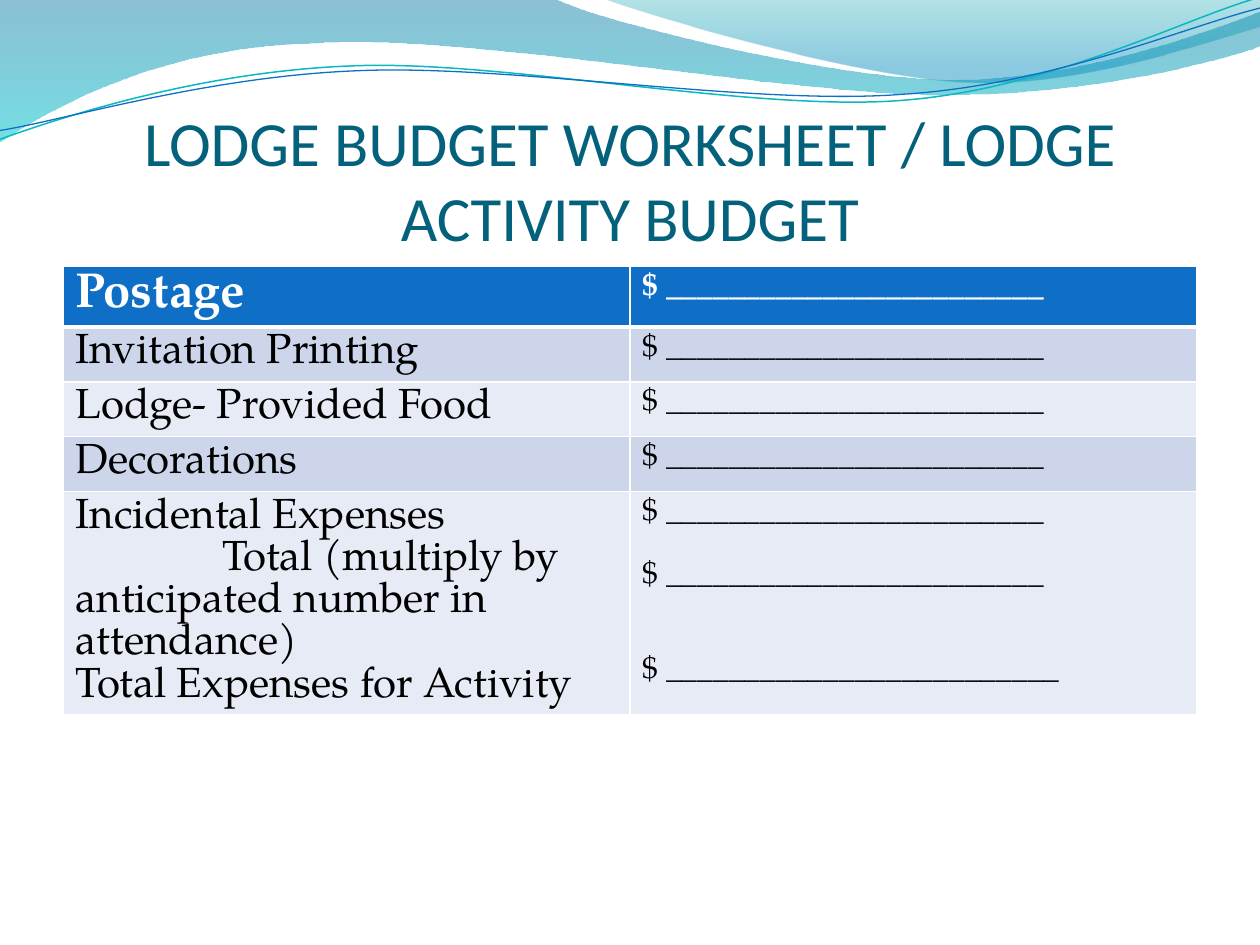
from lxml import etree
from pptx import Presentation
from pptx.dml.color import RGBColor
from pptx.enum.text import MSO_ANCHOR, MSO_AUTO_SIZE, PP_ALIGN
from pptx.oxml.ns import qn
from pptx.util import Cm, Pt

CENTER = PP_ALIGN.CENTER
BOTTOM = MSO_ANCHOR.BOTTOM
NO_AUTOFIT = MSO_AUTO_SIZE.NONE

WHITE = RGBColor(0xFF, 0xFF, 0xFF)
BLACK = RGBColor(0x00, 0x00, 0x00)
TITLE_TEAL = RGBColor(0x04, 0x61, 0x7B)
BLUE = RGBColor(0x0F, 0x6F, 0xC6)
TEAL = RGBColor(0x0A, 0xB8, 0xBF)
BAND_DARK = RGBColor(0xCC, 0xD5, 0xEA)
BAND_LIGHT = RGBColor(0xE7, 0xEB, 0xF5)
WAVE_BLUE = RGBColor(0x00, 0x74, 0xA1)
WAVE_AQUA = RGBColor(0x00, 0xC6, 0xCF)
CREST_GREEN = RGBColor(0x00, 0xA1, 0xA9)
CREST_BLUE = RGBColor(0x00, 0x8B, 0xBF)

TITLE_FONT = "Calibri"
BODY_FONT = "TeX Gyre Pagella"
GRID = 2.54
RIPPLE_ROTATION = 357.3

WAVES = [
    {
        "outline": [(0, 0), (4.4, -0.01),
                    (4.76, 0.17, 6.64, 0.63, 7.58, 0.63), (8.53, 0.63, 9.58, 0.26, 10, 0.09),
                    (10.01, 0.36), (9.83, 0.44, 8.7, 0.76, 7.46, 0.75),
                    (6.22, 0.75, 3.82, 0.28, 2.57, 0.34),
                    (1.29, 0.36, 0.46, 0.83, -0.01, 1.13), (0, 0)],
        "stops": [(0, WAVE_BLUE, 45), (1, WAVE_AQUA, 55)],
    },
    {
        "outline": [(4.79, -0.01), (5.09, 0.11, 6.82, 0.62, 7.69, 0.65),
                    (8.56, 0.69, 9.61, 0.32, 10, 0.21), (10, 0), (4.79, -0.01)],
        "stops": [(0, CREST_GREEN, 30), (0.8, CREST_BLUE, 45)],
    },
]
RIPPLES = [
    {
        "outline": [(-0.02, 0.87), (0.47, 0.72, 1.58, 0.41, 2.78, 0.42),
                    (3.96, 0.42, 5.91, 0.93, 7.12, 0.9), (8.32, 0.87, 9.4, 0.36, 10, 0.22)],
        "color": TEAL, "width": 0.85,
    },
    {
        "outline": [(-0.02, 0.8), (0.46, 0.75, 1.64, 0.45, 2.83, 0.46),
                    (4.03, 0.46, 5.96, 0.89, 7.16, 0.85), (8.35, 0.83, 9.42, 0.42, 10.02, 0.3)],
        "color": BLUE, "width": 0.75,
    },
]

BLANK = "$ " + "_" * 24
ITEMS = [
    (["Postage"], [BLANK]),
    (["Invitation Printing"], [BLANK]),
    (["Lodge- Provided Food"], [BLANK]),
    (["Decorations"], [BLANK]),
    (["Incidental Expenses",
      "Total (multiply by anticipated number in attendance)",
      "Total Expenses for Activity"],
     [BLANK, BLANK, BLANK + "_"]),
]
AMOUNT_GAPS = [0, 18, 36]


def add_curve(slide, outline, close):
    """Add a freeform of lines and cubic curves to the layout behind the slide."""
    steps = [[(Cm(x * GRID), Cm(y * GRID)) for x, y in zip(step[::2], step[1::2])]
             for step in outline]
    ends = [step[-1] for step in steps]
    builder = slide.shapes.build_freeform(*ends[0])
    builder.add_line_segments(ends[1:], close=close)
    shape = builder.convert_to_shape()
    shape.shadow.inherit = False
    left, top = shape.left, shape.top
    segments = list(shape._element.iter(qn("a:lnTo")))
    for segment, step in zip(segments, steps[1:]):
        if len(step) == 3:
            curve = etree.Element(qn("a:cubicBezTo"))
            for x, y in step:
                etree.SubElement(curve, qn("a:pt"), x=str(x - left), y=str(y - top))
            segment.getparent().replace(segment, curve)
    slide.slide_layout.shapes._spTree.append(shape._element)
    return shape


def add_wave(slide, outline, stops):
    """Add a closed wave with a translucent gradient from top to bottom."""
    shape = add_curve(slide, outline, True)
    shape.line.fill.background()
    shape.fill.gradient()
    shape.fill.gradient_angle = 270
    for stop, (position, color, _) in zip(shape.fill.gradient_stops, stops):
        stop.position = position
        stop.color.rgb = color
    gradient = shape._element.spPr.find(qn("a:gradFill"))
    for color, (_, _, opacity) in zip(gradient.iter(qn("a:srgbClr")), stops):
        etree.SubElement(color, qn("a:alpha"), val=str(opacity * 1000))


def add_ripple(slide, outline, color, width):
    """Add an open curved line, slightly turned."""
    shape = add_curve(slide, outline, False)
    shape.rotation = RIPPLE_ROTATION
    shape.fill.background()
    shape.line.color.rgb = color
    shape.line.width = Pt(width)


def write_paragraph(paragraph, text, color, **formats):
    """Write one formatted run into a paragraph."""
    run = paragraph.add_run()
    run.text = text
    run.font.color.rgb = color
    for name, value in formats.items():
        setattr(run.font, name, value)


def format_title(slide):
    """Place and write the title."""
    title = slide.shapes.title
    placement = {"left": Cm(1.27), "top": Cm(1.95), "width": Cm(22.86), "height": Cm(3.18)}
    for name, value in placement.items():
        setattr(title, name, value)
    frame = title.text_frame
    layout = {"margin_left": 0, "margin_right": 0, "margin_top": Cm(0.13), "margin_bottom": 0,
              "vertical_anchor": BOTTOM, "word_wrap": True, "auto_size": NO_AUTOFIT}
    for name, value in layout.items():
        setattr(frame, name, value)
    paragraph = frame.paragraphs[0]
    paragraph.alignment = CENTER
    write_paragraph(paragraph, "LODGE BUDGET WORKSHEET / LODGE ACTIVITY BUDGET", TITLE_TEAL,
                    name=TITLE_FONT, size=Pt(36))


def set_borders(cell, top, bottom):
    """Draw white borders round a cell."""
    properties = cell._tc.get_or_add_tcPr()
    for side, width in {"L": 1, "R": 1, "T": top, "B": bottom}.items():
        line = etree.SubElement(properties, qn("a:ln" + side), w=str(Pt(width)))
        fill = etree.SubElement(line, qn("a:solidFill"))
        etree.SubElement(fill, qn("a:srgbClr"), val=str(WHITE))


def fill_cell(cell, lines, row, size, gaps):
    """Fill, border and write one table cell."""
    header = row == 0
    set_borders(cell, 3 if row == 1 else 1, 3 if header else 1)
    cell.fill.solid()
    cell.fill.fore_color.rgb = BLUE if header else (BAND_LIGHT, BAND_DARK)[row % 2]
    for index, text in enumerate(lines):
        paragraph = cell.text_frame.paragraphs[0] if index == 0 else cell.text_frame.add_paragraph()
        if gaps[index]:
            paragraph.space_before = Pt(gaps[index])
        if text.startswith("Total (multiply"):
            paragraph._p.get_or_add_pPr().set("indent", str(Cm(2.96)))
        write_paragraph(paragraph, text, WHITE if header else BLACK,
                        name=BODY_FONT, size=Pt(size), bold=header)


def add_budget_table(slide):
    """Add the table of expenses and amounts."""
    row_height = Cm(1.04)
    frame = slide.shapes.add_table(len(ITEMS), 2, Cm(1.27), Cm(5.37),
                                   Cm(22.86), row_height * len(ITEMS))
    for row, (expenses, amounts) in enumerate(ITEMS):
        fill_cell(frame.table.cell(row, 0), expenses, row, 24 if row else 28, [0] * len(expenses))
        fill_cell(frame.table.cell(row, 1), amounts, row, 18, AMOUNT_GAPS)


def main():
    """Build the budget worksheet slide."""
    presentation = Presentation()
    presentation.slide_width = Cm(25.4)
    presentation.slide_height = Cm(19.05)
    slide = presentation.slides.add_slide(presentation.slide_layouts[5])
    for wave in WAVES:
        add_wave(slide, **wave)
    for ripple in RIPPLES:
        add_ripple(slide, **ripple)
    format_title(slide)
    add_budget_table(slide)
    presentation.save("out.pptx")


if __name__ == "__main__":
    main()
